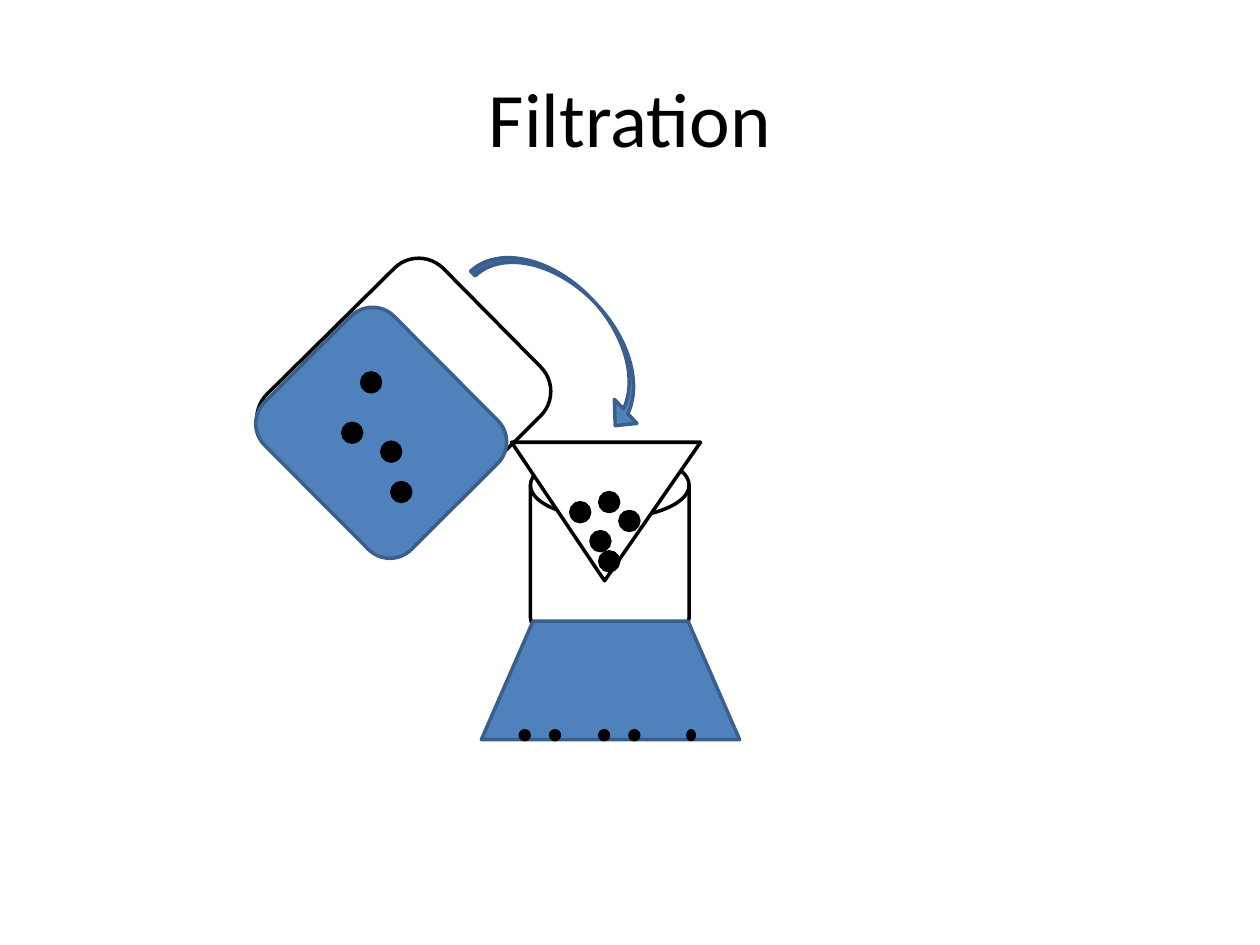
from pptx import Presentation
from pptx.dml.color import RGBColor
from pptx.enum.shapes import MSO_SHAPE as SHAPE
from pptx.enum.text import MSO_ANCHOR, PP_ALIGN
from pptx.util import Inches, Pt

WHITE = RGBColor(0xFF, 0xFF, 0xFF)
BLACK = RGBColor(0x00, 0x00, 0x00)
BLUE = RGBColor(0x4F, 0x81, 0xBD)
DARK_BLUE = RGBColor(0x3A, 0x5F, 0x8C)
GRAIN = 0.15
RESIDUE = 0.07

prs = Presentation()
prs.slide_width, prs.slide_height = Inches(10), Inches(7.5)
slide = prs.slides.add_slide(prs.slide_layouts[5])


def add_part(kind, x, y, w, h, fill, line, rotation=0, adjustments=()):
    """Add a filled, outlined shape; lengths are in inches."""
    s = slide.shapes.add_shape(kind, Inches(x), Inches(y), Inches(w), Inches(h))
    s.shadow.inherit = False
    s.fill.solid()
    s.fill.fore_color.rgb = fill
    s.line.color.rgb = line
    s.line.width = Pt(2)
    s.rotation = rotation
    for i, value in enumerate(adjustments):
        s.adjustments[i] = value


def add_grains(positions, w, h):
    for x, y in positions:
        add_part(SHAPE.OVAL, x, y, w, h, BLACK, BLACK)


title = slide.shapes.title
title.left, title.top = Inches(0.5), Inches(0.3)
title.width, title.height = Inches(9), Inches(1.25)
tf = title.text_frame
tf.text = "Filtration"
tf.vertical_anchor = MSO_ANCHOR.MIDDLE
p = tf.paragraphs[0]
p.alignment = PP_ALIGN.CENTER
p.font.name = "Calibri"
p.font.size = Pt(44)
p.font.color.rgb = BLACK

# Neck of the flask
add_part(SHAPE.FLOWCHART_MAGNETIC_DISK, 4.21, 3.59, 1.26, 1.57, WHITE, BLACK)

# Tilted beaker with its mixture
add_part(SHAPE.ROUNDED_RECTANGLE, 2.38, 2.23, 1.65, 1.97, WHITE, BLACK, 45.3)
add_part(SHAPE.ROUNDED_RECTANGLE, 2.2, 2.71, 1.65, 1.45, BLUE, DARK_BLUE, 45.1)
add_grains([(3.03, 3.51), (2.87, 2.96), (2.72, 3.36), (3.11, 3.83)], GRAIN, GRAIN)

# Pouring direction
add_part(SHAPE.CURVED_DOWN_ARROW, 3.65, 2.35, 1.81, 0.55, BLUE, DARK_BLUE, 46.9,
         (0.093, 0.476, 0.25))

# Filtrate in the flask, with fine residue at the bottom
add_part(SHAPE.FLOWCHART_MANUAL_OPERATION, 3.82, 4.93, 2.05, 0.94, BLUE, DARK_BLUE, 180)
add_grains([(x, 5.8) for x in (4.13, 4.37, 4.76, 5)], RESIDUE, RESIDUE)
add_grains([(5.46, 5.8)], 0.05, RESIDUE)

# Funnel with the grains it holds back
add_part(SHAPE.ISOSCELES_TRIANGLE, 4.06, 3.51, 1.5, 1.1, WHITE, BLACK, 180, (0.508,))
add_grains([(4.76, 4.38), (4.69, 4.22), (4.76, 3.91), (4.53, 3.99), (4.92, 4.06)],
           GRAIN, GRAIN)

prs.save("out.pptx")
